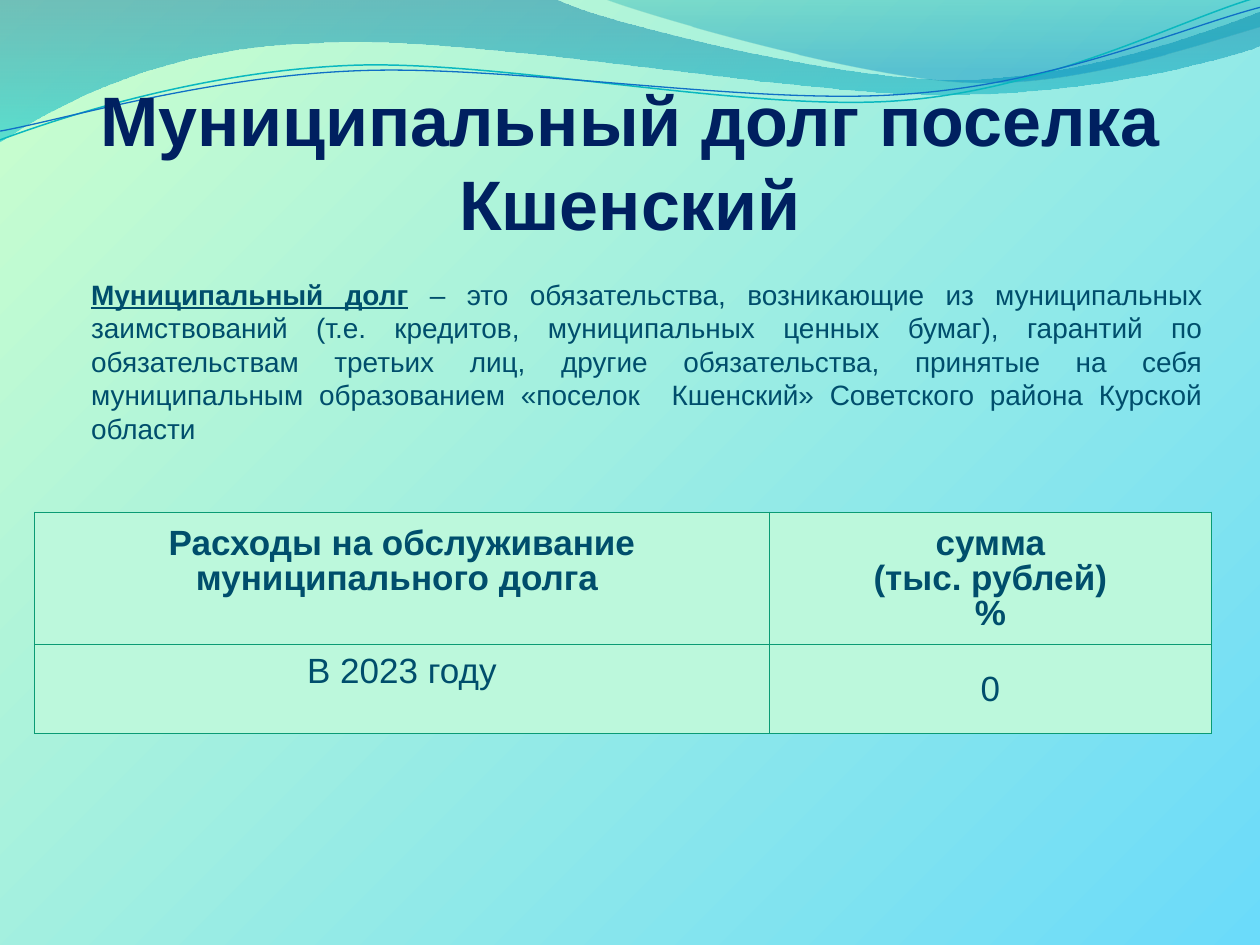
import pptx
import pptx.dml.color
import pptx.enum.text
import pptx.oxml
import pptx.oxml.ns
import pptx.util

RGB = pptx.dml.color.RGBColor
ALIGN = pptx.enum.text.PP_ALIGN
ANCHOR = pptx.enum.text.MSO_ANCHOR
FIT = pptx.enum.text.MSO_AUTO_SIZE
qn = pptx.oxml.ns.qn
Pt = pptx.util.Pt

NAVY = RGB(0x00, 0x20, 0x60)
TEAL = RGB(0x00, 0x4E, 0x6C)
SKY = RGB(0x6B, 0xDB, 0xFA)
MINT = RGB(0xCC, 0xFF, 0xCC)
CELL = RGB(0xBC, 0xF8, 0xDC)
BORDER = RGB(0x0A, 0x9B, 0x74)
DEEP = RGB(0x00, 0x74, 0xA1)
CYAN = RGB(0x00, 0xC6, 0xCF)
DARK_CYAN = RGB(0x00, 0xA1, 0xA9)
AZURE = RGB(0x00, 0x8B, 0xBF)
LINE_CYAN = RGB(0x0A, 0xB8, 0xBF)
LINE_BLUE = RGB(0x0F, 0x6F, 0xC6)

COLS, ROWS = 100, 75
FONT = "Arial"
LINE_ROWS = 2.85  # height of one table text line


class Deck:
    """Holds the presentation, its style and the current slide; lengths are grid cells."""

    def __init__(self, width, height):
        self.prs = pptx.Presentation()
        self.prs.slide_width = pptx.util.Inches(width)
        self.prs.slide_height = pptx.util.Inches(height)
        self.s = self.prs.slides.add_slide(self.prs.slide_layouts[6])

    def x(self, cols):
        return round(self.prs.slide_width * cols / COLS)

    def y(self, rows):
        return round(self.prs.slide_height * rows / ROWS)

    def box(self, left, top, width, height):
        return self.x(left), self.y(top), self.x(width), self.y(height)

    def gradient(self, fill, stops):
        """Two stops, each a position, a colour and an opacity in percent."""
        fill.gradient()
        for stop, (position, color, opacity) in zip(fill.gradient_stops, stops):
            stop.position = position
            stop.color.rgb = color
            if opacity < 100:
                srgb = stop._gs.find(qn("a:srgbClr"))
                srgb.append(srgb.makeelement(qn("a:alpha"), {"val": str(opacity * 1000)}))

    def background(self, corner, far):
        """Radial gradient spreading from the bottom right corner."""
        self.gradient(self.s.background.fill, [(0, corner, 100), (1, far, 100)])
        lin = next(self.s._element.iter(qn("a:lin")))
        radial = lin.makeelement(qn("a:path"), {"path": "circle"})
        radial.append(lin.makeelement(qn("a:fillToRect"), {"l": "100000", "t": "100000"}))
        lin.getparent().replace(lin, radial)

    def freeform(self, start, segments, close):
        """A segment of one point is straight, a segment of three points is a Bezier curve."""
        points = [(self.x(cx), self.y(cy)) for seg in segments for cx, cy in seg]
        builder = self.s.shapes.build_freeform(self.x(start[0]), self.y(start[1]))
        builder.add_line_segments(points, close=close)
        sp = builder.convert_to_shape()
        sp.shadow.inherit = False
        lines = iter(list(sp._element.iter(qn("a:lnTo"))))
        for seg in segments:
            group = [next(lines) for _ in seg]
            if len(group) == 3:
                bezier = group[0].makeelement(qn("a:cubicBezTo"), {})
                group[0].addprevious(bezier)
                for line in group:
                    bezier.append(line[0])
                    line.getparent().remove(line)
        return sp

    def wave(self, start, segments, top, bottom):
        sp = self.freeform(start, segments, True)
        sp.line.fill.background()
        self.gradient(sp.fill, [top, bottom])
        sp.fill.gradient_angle = 270

    def stroke(self, start, segments, color, width, rotation):
        sp = self.freeform(start, segments, False)
        sp.rotation = rotation
        sp.fill.background()
        sp.line.color.rgb = color
        sp.line.width = Pt(width)

    def style(self, p, size, color, align, bold=None):
        p.alignment = align
        p.font.name = FONT
        p.font.size = Pt(size)
        p.font.color.rgb = color
        p.font.bold = bold

    def text(self, box, runs, size, color, align, anchor=ANCHOR.TOP, before=0, fit=FIT.NONE):
        """Runs are pairs of text and font settings."""
        tf = self.s.shapes.add_textbox(*self.box(*box)).text_frame
        tf.word_wrap = True
        tf.auto_size = fit
        tf.vertical_anchor = anchor
        p = tf.paragraphs[0]
        self.style(p, size, color, align)
        p.space_before = Pt(before)
        for words, settings in runs:
            r = p.add_run()
            r.text = words
            for name, value in settings.items():
                setattr(r.font, name, value)

    def borders(self, cell, color, width):
        tc_pr = cell._tc.get_or_add_tcPr()
        for side in ("lnL", "lnR", "lnT", "lnB"):
            tc_pr.append(pptx.oxml.parse_xml(
                f'<a:{side} {pptx.oxml.ns.nsdecls("a")} w="{Pt(width)}"><a:solidFill>'
                f'<a:srgbClr val="{color}"/></a:solidFill></a:{side}>'))

    def table(self, left, top, widths, heights, rows, insets):
        """The first row is bold, the first column sits half a line above the middle."""
        box = self.box(left, top, sum(widths), sum(heights))
        table = self.s.shapes.add_table(len(rows), len(widths), *box).table
        for column, width in zip(table.columns, widths):
            column.width = self.x(width)
        for i, (row, height) in enumerate(zip(rows, heights)):
            table.rows[i].height = self.y(height)
            side, above = insets[i]
            for j, lines in enumerate(row):
                cell = table.cell(i, j)
                cell.margin_left = cell.margin_right = self.x(side)
                cell.margin_top = self.y(above)
                cell.margin_bottom = self.y(side + (LINE_ROWS if j == 0 else 0))
                cell.vertical_anchor = ANCHOR.MIDDLE
                cell.text = lines
                for p in cell.text_frame.paragraphs:
                    self.style(p, 20, TEAL, ALIGN.CENTER, bold=i == 0)
                    p.line_spacing = 0.9
                self.borders(cell, BORDER, 0.75)
                cell.fill.solid()
                cell.fill.fore_color.rgb = CELL


def main():
    deck = Deck(10, 7.5)
    deck.background(SKY, MINT)
    deck.wave((0, 0), [[(44, -0.1)],
                       [(47.6, 1.7), (66.4, 6.3), (75.8, 6.3)],
                       [(85.3, 6.3), (95.8, 2.6), (100, 0.9)],
                       [(100.1, 3.6)],
                       [(98.3, 4.4), (87, 7.6), (74.6, 7.5)],
                       [(62.2, 7.5), (38.2, 2.8), (25.7, 3.4)],
                       [(12.9, 3.6), (4.6, 8.3), (-0.1, 11.3)]],
              (0, DEEP, 45), (1, CYAN, 55))
    deck.wave((47.9, -0.1), [[(50.9, 1.1), (68.2, 6.2), (76.9, 6.5)],
                             [(85.6, 6.9), (96.1, 3.2), (100, 2.1)],
                             [(100, 0)]],
              (0, DARK_CYAN, 30), (0.8, AZURE, 45))
    deck.stroke((-0.2, 8.75), [[(4.7, 7.2), (15.8, 4.1), (27.75, 4.15)],
                               [(39.55, 4.2), (59.15, 9.35), (71.2, 9)],
                               [(83.2, 8.7), (93.95, 3.55), (100, 2.15)]],
                LINE_CYAN, 0.85, 357.3)
    deck.stroke((-0.15, 8.05), [[(4.55, 7.45), (16.4, 4.5), (28.3, 4.6)],
                                [(40.35, 4.65), (59.6, 8.85), (71.6, 8.5)],
                                [(83.55, 8.3), (94.2, 4.2), (100.2, 2.95)]],
                LINE_BLUE, 0.75, 357.3)

    deck.text((4.1, 6.9, 91.8, 11.7),
              [("Муниципальный долг поселка Кшенский", {"bold": True})],
              40, NAVY, ALIGN.CENTER, ANCHOR.MIDDLE)
    deck.text((6.25, 21.5, 90.2, 14.5),
              [("Муниципальный долг", {"bold": True, "underline": True}),
               (" ", {"bold": True}),
               ("– это обязательства, возникающие из муниципальных заимствований "
                "(т.е. кредитов, муниципальных ценных бумаг), гарантий по обязательствам "
                "третьих лиц, другие обязательства, принятые на себя муниципальным "
                "образованием «поселок  Кшенский» Советского района Курской области", {})],
              16, TEAL, ALIGN.JUSTIFY, before=8.1, fit=FIT.SHAPE_TO_FIT_TEXT)
    deck.table(2.75, 40.65, [58.3, 35.1], [10.45, 7.05],
               [["Расходы на обслуживание муниципального долга ",
                 "сумма\n(тыс. рублей)\n%"],
                ["В 2023 году", "0"]],
               insets=[(0.6, 0.9), (0.4, 0.7)])
    deck.prs.save("out.pptx")


if __name__ == "__main__":
    main()
